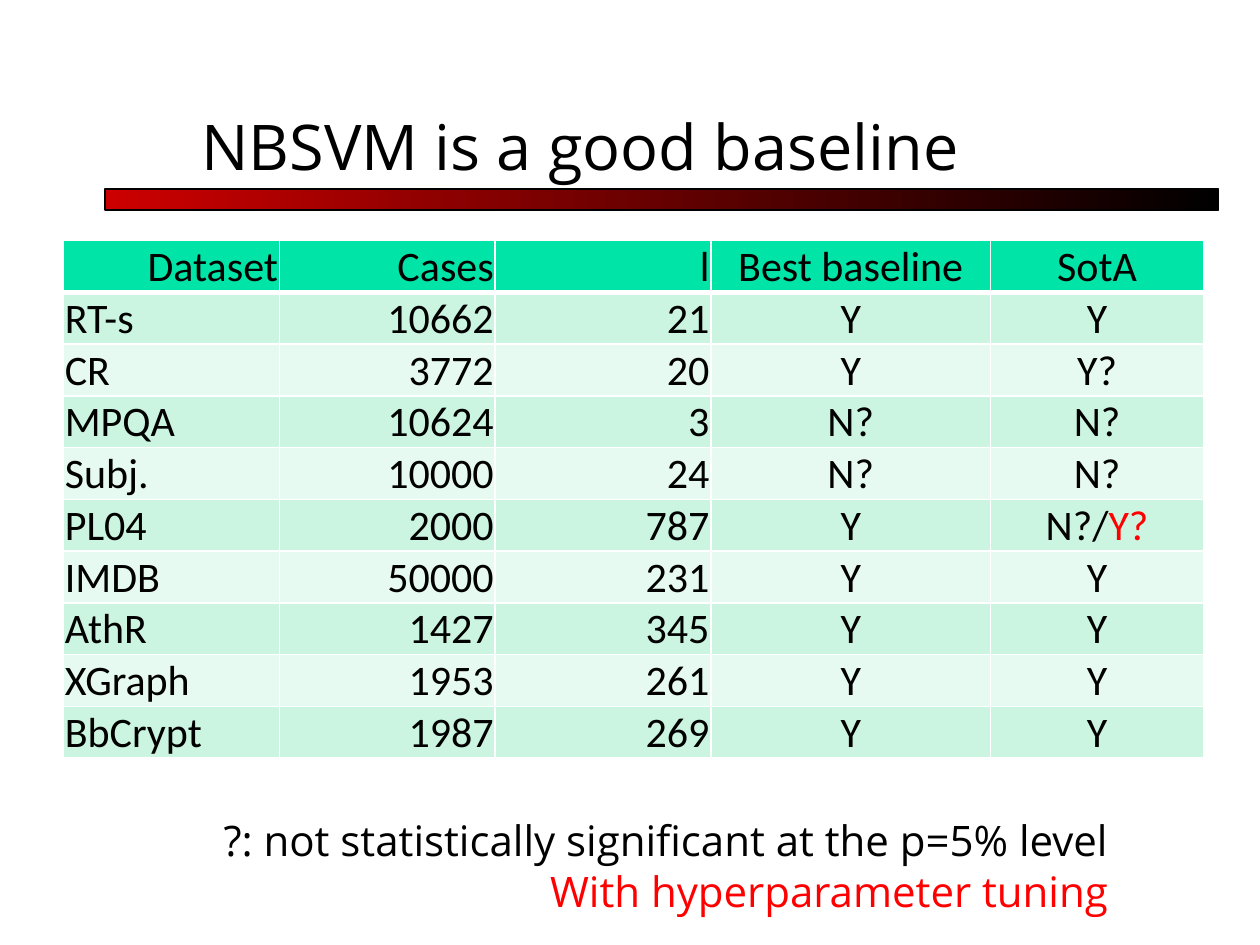
from typing import NamedTuple

from lxml.etree import SubElement
from pptx import Presentation
from pptx.dml.color import RGBColor
from pptx.enum.shapes import MSO_SHAPE
from pptx.enum.text import MSO_ANCHOR, MSO_AUTO_SIZE, PP_ALIGN
from pptx.oxml.ns import qn
from pptx.util import Pt

BLACK = RGBColor(0x00, 0x00, 0x00)
RED = RGBColor(0xFF, 0x00, 0x00)
DARK_RED = RGBColor(0xCC, 0x00, 0x00)
WHITE = RGBColor(0xFF, 0xFF, 0xFF)
GREEN = RGBColor(0x00, 0xE4, 0xA8)
BANDS = RGBColor(0xCC, 0xF5, 0xE1), RGBColor(0xE7, 0xFA, 0xF1)

LEFT, RIGHT, MID = PP_ALIGN.LEFT, PP_ALIGN.RIGHT, PP_ALIGN.CENTER


class Run(NamedTuple):
    text: str
    color: RGBColor = BLACK


class Line(NamedTuple):
    runs: list[Run]
    align: PP_ALIGN = LEFT


class Box(NamedTuple):
    x: float
    y: float
    w: float
    h: float
    lines: list[Line]
    size: float
    frame: dict


class Column(NamedTuple):
    head: str
    width: float
    align: PP_ALIGN


COLUMNS = [
    Column("Dataset", 123.3, RIGHT),
    Column("Cases", 123.3, RIGHT),
    Column("l", 123.3, RIGHT),
    Column("Best baseline", 160, MID),
    Column("SotA", 121.5, MID),
]
ROWS = [
    ("RT-s", "10662", "21", "Y", "Y"),
    ("CR", "3772", "20", "Y", "Y?"),
    ("MPQA", "10624", "3", "N?", "N?"),
    ("Subj.", "10000", "24", "N?", "N?"),
    ("PL04", "2000", "787", "Y", [Run("N?/"), Run("Y?", RED)]),
    ("IMDB", "50000", "231", "Y", "Y"),
    ("AthR", "1427", "345", "Y", "Y"),
    ("XGraph", "1953", "261", "Y", "Y"),
    ("BbCrypt", "1987", "269", "Y", "Y"),
]
ROW_HEIGHT = 29.5
CELL = {
    "vertical_anchor": MSO_ANCHOR.BOTTOM,
    "margin_left": Pt(0.75),
    "margin_top": Pt(0.75),
    "margin_right": Pt(0.75),
    "margin_bottom": Pt(0),
}

BOXES = [
    Box(108, 30, 612, 78, [Line([Run("NBSVM is a good baseline")])], 36,
        {"word_wrap": True, "vertical_anchor": MSO_ANCHOR.BOTTOM}),
    Box(76.3, 462, 564, 65.5, [
        Line([Run("?: not statistically significant at the p=5% level")], RIGHT),
        Line([Run("With hyperparameter tuning", RED)], RIGHT),
    ], 24, {"word_wrap": False, "auto_size": MSO_AUTO_SIZE.SHAPE_TO_FIT_TEXT}),
]


def apply(target, values: dict) -> None:
    for name, value in values.items():
        setattr(target, name, value)


def write(par, line: Line, font: str, size: float) -> None:
    par.alignment = line.align
    for text, color in line.runs:
        run = par.add_run()
        run.text = text
        apply(run.font, {"name": font, "size": Pt(size), "bold": False})
        run.font.color.rgb = color


def add_box(slide, box: Box) -> None:
    frame = slide.shapes.add_textbox(
        Pt(box.x), Pt(box.y), Pt(box.w), Pt(box.h)).text_frame
    apply(frame, box.frame)
    for i, line in enumerate(box.lines):
        par = frame.add_paragraph() if i else frame.paragraphs[0]
        write(par, line, "Open Sans", box.size)


def add_bar(slide) -> None:
    bar = slide.shapes.add_shape(
        MSO_SHAPE.RECTANGLE, Pt(60), Pt(108), Pt(636.5), Pt(12))
    bar.shadow.inherit = False
    bar.fill.gradient()
    bar.fill.gradient_angle = 0
    for stop, color, place in zip(
            bar.fill.gradient_stops, (DARK_RED, BLACK), (0, 1)):
        stop.color.rgb = color
        stop.position = place
    bar.line.color.rgb = BLACK
    bar.line.width = Pt(0.75)


def add_edges(cell, widths: dict[str, float]) -> None:
    """Draw white borders, which must come before the cell's fill."""
    props = cell._tc.get_or_add_tcPr()
    for side, width in widths.items():
        edge = SubElement(props, qn(f"a:{side}"), w=str(Pt(width)))
        fill = SubElement(edge, qn("a:solidFill"))
        SubElement(fill, qn("a:srgbClr"), val=str(WHITE))


def add_grid(slide) -> None:
    rows = [tuple(col.head for col in COLUMNS), *ROWS]
    table = slide.shapes.add_table(
        len(rows), len(COLUMNS), Pt(36.3), Pt(137.5),
        Pt(sum(col.width for col in COLUMNS)),
        Pt(ROW_HEIGHT * len(rows))).table
    for slot, col in zip(table.columns, COLUMNS):
        slot.width = Pt(col.width)
    for r, values in enumerate(rows):
        table.rows[r].height = Pt(ROW_HEIGHT)
        for c, value in enumerate(values):
            cell = table.cell(r, c)
            apply(cell, CELL)
            add_edges(cell, {"lnL": 1, "lnR": 1,
                             "lnT": 3 if r == 1 else 1,
                             "lnB": 1 if r else 3})
            cell.fill.solid()
            cell.fill.fore_color.rgb = BANDS[(r - 1) % 2] if r else GREEN
            runs = [Run(value)] if isinstance(value, str) else value
            align = LEFT if r and c == 0 else COLUMNS[c].align
            write(cell.text_frame.paragraphs[0], Line(runs, align),
                  "Calibri", 24)


def main() -> None:
    deck = Presentation()
    apply(deck, {"slide_width": Pt(720), "slide_height": Pt(540)})
    slide = deck.slides.add_slide(deck.slide_layouts[6])
    title, note = BOXES
    add_bar(slide)
    add_box(slide, title)
    add_grid(slide)
    add_box(slide, note)
    deck.save("out.pptx")


if __name__ == "__main__":
    main()
